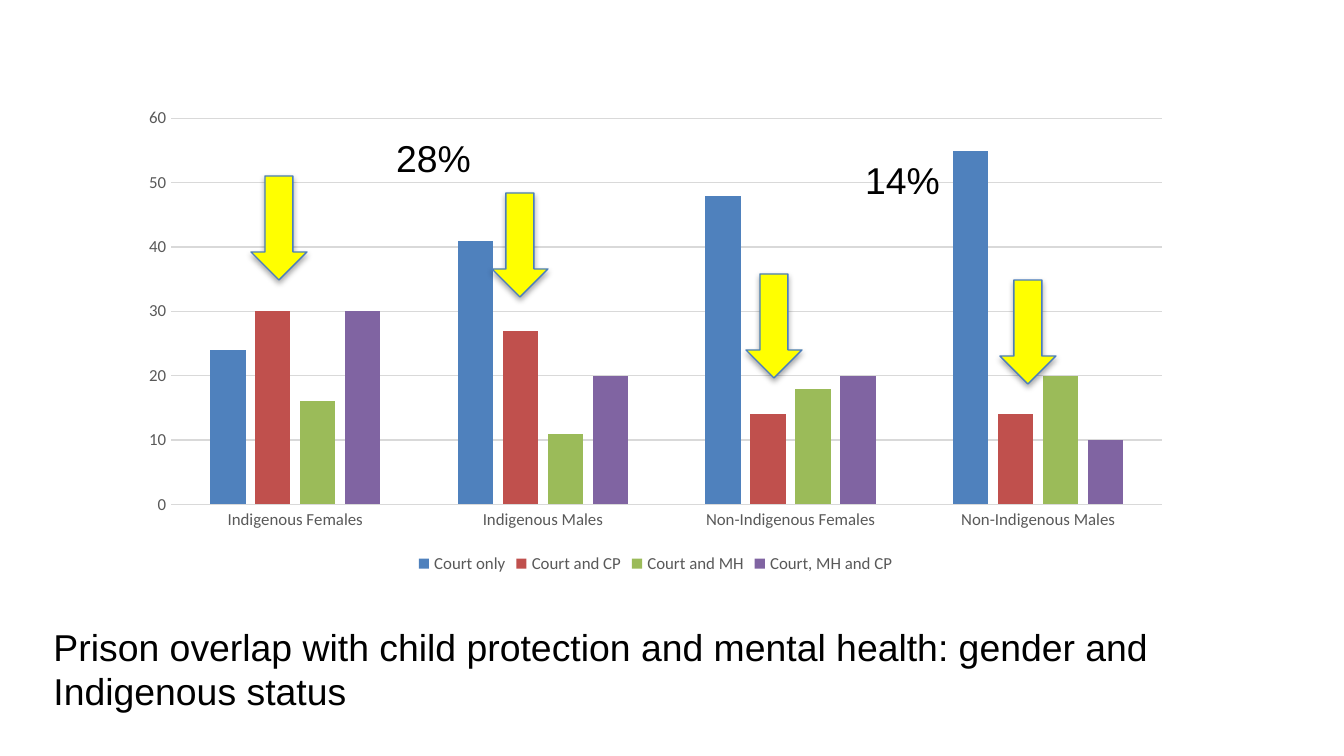
"""Build a slide comparing prison overlap by gender and Indigenous status."""
import pptx
import pptx.chart.data
import pptx.dml.color
import pptx.enum.chart
import pptx.enum.shapes
import pptx.enum.text
import pptx.oxml
import pptx.oxml.ns
import pptx.util
from dataclasses import dataclass

TITLE = "Prison overlap with child protection and mental health: gender and Indigenous status"
GROUPS = ["Indigenous Females", "Indigenous Males", "Non-Indigenous Females", "Non-Indigenous Males"]
SERIES = [
    ("Court only", (24, 41, 48, 55), "4F81BD"),
    ("Court and CP", (30, 27, 14, 14), "C0504D"),
    ("Court and MH", (16, 11, 18, 20), "9BBB59"),
    ("Court, MH and CP", (30, 20, 20, 10), "8064A2"),
]
CALLOUTS = [("28%", 383, 129), ("14%", 852, 151)]
ARROWS = [(251, 176), (1000, 280), (492, 193), (746, 274)]

PAGE_SIZE = (1344, 756)
TITLE_BOX = (40, 617, 1263, 103)
CHART_BOX = (128, 99, 1055, 480)
CALLOUT_SIZE = (102, 59)
ARROW_SIZE = (56, 104)
EMU_PER_PX = 914400 / 134.4


@dataclass(frozen=True)
class Theme:
    font: str = "Arial"
    chart_font: str = "Calibri"
    text: str = "000000"
    label: str = "595959"
    grid: str = "D9D9D9"
    arrow: str = "FFFF00"
    arrow_line: str = "4B7EBC"
    text_size: int = 20
    chart_size: int = 10
    label_size: int = 9
    line_width: float = 0.75


THEME = Theme()


def px(*lengths):
    return [pptx.util.Emu(round(length * EMU_PER_PX)) for length in lengths]


def color(value):
    return pptx.dml.color.RGBColor.from_string(value)


def style_font(font, name, size, value):
    font.name = name
    font.size = pptx.util.Pt(size)
    font.color.rgb = color(value)


def style_line(line, value):
    line.color.rgb = color(value)
    line.width = pptx.util.Pt(THEME.line_width)


def write_text(box, text, wrap=True):
    frame = box.text_frame
    frame.word_wrap = wrap
    frame.auto_size = pptx.enum.text.MSO_AUTO_SIZE.SHAPE_TO_FIT_TEXT
    frame.vertical_anchor = pptx.enum.text.MSO_ANCHOR.TOP
    para = frame.paragraphs[0]
    para.alignment = pptx.enum.text.PP_ALIGN.LEFT
    span = para.add_run()
    span.text = text
    style_font(span.font, THEME.font, THEME.text_size, THEME.text)


def add_title(page):
    title = page.shapes.title
    title.left, title.top, title.width, title.height = px(*TITLE_BOX)
    write_text(title, TITLE)


def add_column_chart(page):
    data = pptx.chart.data.CategoryChartData()
    data.categories = GROUPS
    for name, values, _ in SERIES:
        data.add_series(name, values)
    kind = pptx.enum.chart.XL_CHART_TYPE.COLUMN_CLUSTERED
    chart = page.shapes.add_chart(kind, *px(*CHART_BOX), data).chart
    chart.has_title = False
    style_font(chart.font, THEME.chart_font, THEME.chart_size, THEME.text)

    plot = chart.plots[0]
    plot.gap_width = 219
    plot.overlap = -27
    plot.vary_by_categories = False
    for series, (_, _, fill) in zip(plot.series, SERIES):
        series.format.fill.solid()
        series.format.fill.fore_color.rgb = color(fill)

    for axis in (chart.category_axis, chart.value_axis):
        axis.major_tick_mark = pptx.enum.chart.XL_TICK_MARK.NONE
        axis.minor_tick_mark = pptx.enum.chart.XL_TICK_MARK.NONE
        style_font(axis.tick_labels.font, THEME.chart_font, THEME.label_size, THEME.label)
    style_line(chart.category_axis.format.line, THEME.grid)
    scale = chart.value_axis
    scale.minimum_scale, scale.maximum_scale, scale.major_unit = 0, 60, 10
    scale.format.line.fill.background()
    style_line(scale.major_gridlines.format.line, THEME.grid)

    chart.has_legend = True
    chart.legend.position = pptx.enum.chart.XL_LEGEND_POSITION.BOTTOM
    chart.legend.include_in_layout = False
    style_font(chart.legend.font, THEME.chart_font, THEME.label_size, THEME.label)


def add_arrow(page, left, top):
    kind = pptx.enum.shapes.MSO_SHAPE.DOWN_ARROW
    arrow = page.shapes.add_shape(kind, *px(left, top, *ARROW_SIZE))
    arrow.fill.solid()
    arrow.fill.fore_color.rgb = color(THEME.arrow)
    style_line(arrow.line, THEME.arrow_line)
    arrow.shadow.inherit = False
    effects = arrow._element.spPr.find(pptx.oxml.ns.qn("a:effectLst"))
    effects.append(pptx.oxml.parse_xml(
        f'<a:outerShdw {pptx.oxml.ns.nsdecls("a")} blurRad="40000" dist="23000" '
        f'dir="5400000" rotWithShape="0"><a:srgbClr val="{THEME.text}">'
        '<a:alpha val="35000"/></a:srgbClr></a:outerShdw>'
    ))


def main():
    deck = pptx.Presentation()
    deck.slide_width, deck.slide_height = px(*PAGE_SIZE)
    page = deck.slides.add_slide(deck.slide_layouts.get_by_name("Title Only"))
    add_title(page)
    add_column_chart(page)
    for left, top in ARROWS:
        add_arrow(page, left, top)
    for text, left, top in CALLOUTS:
        write_text(page.shapes.add_textbox(*px(left, top, *CALLOUT_SIZE)), text, wrap=False)
    deck.save("out.pptx")


if __name__ == "__main__":
    main()
